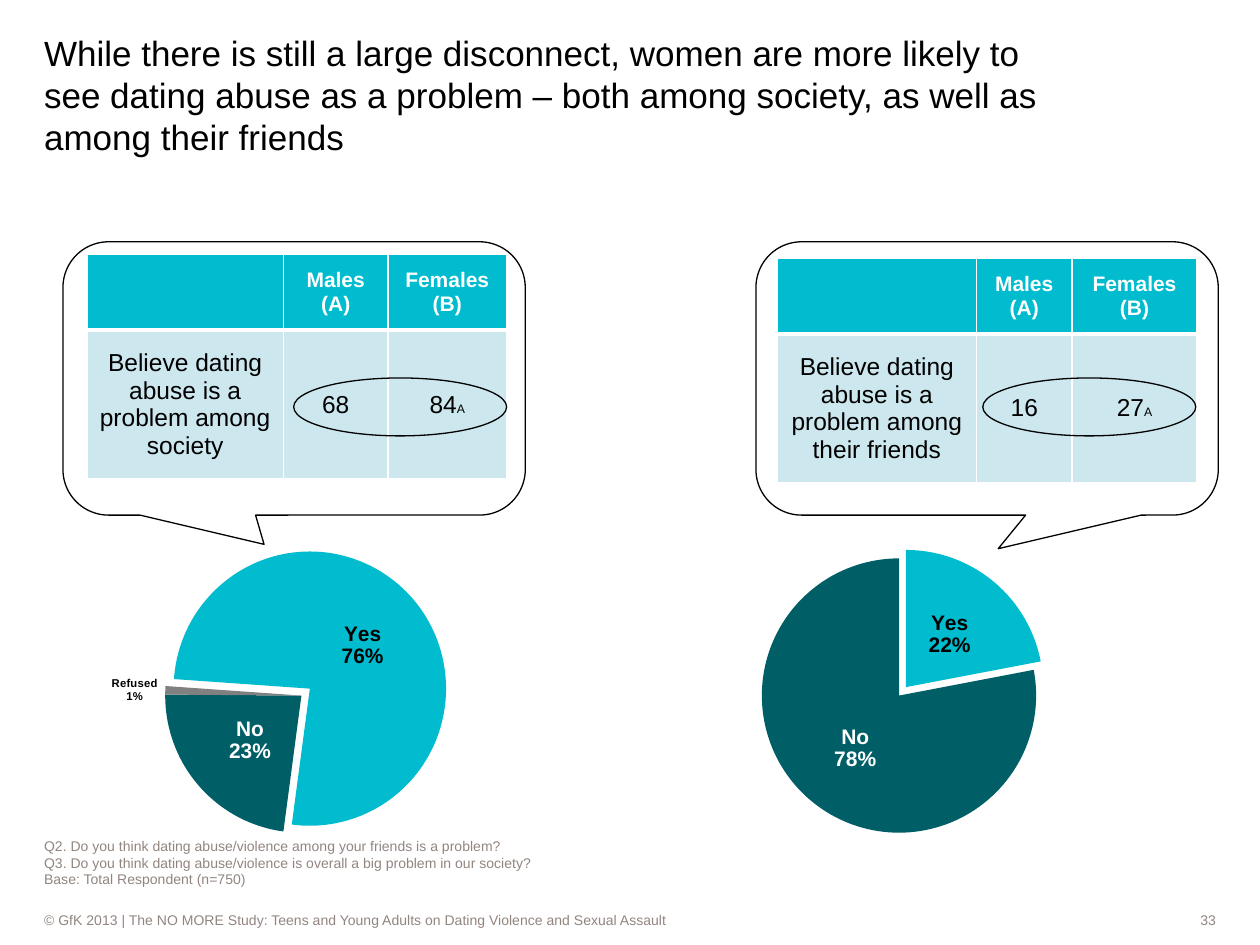
from dataclasses import dataclass

from lxml import etree
from pptx import Presentation
from pptx.chart.data import CategoryChartData
from pptx.dml.color import RGBColor
from pptx.enum.chart import XL_CHART_TYPE, XL_LABEL_POSITION
from pptx.enum.shapes import MSO_SHAPE
from pptx.enum.text import MSO_ANCHOR, PP_ALIGN
from pptx.oxml import parse_xml
from pptx.oxml.ns import nsdecls, qn
from pptx.util import Pt

PIE = XL_CHART_TYPE.PIE
LABEL_CENTER, LABEL_OUTSIDE = XL_LABEL_POSITION.CENTER, XL_LABEL_POSITION.OUTSIDE_END
CALLOUT, OVAL = MSO_SHAPE.ROUNDED_RECTANGULAR_CALLOUT, MSO_SHAPE.OVAL
TOP, MIDDLE, BOTTOM = MSO_ANCHOR.TOP, MSO_ANCHOR.MIDDLE, MSO_ANCHOR.BOTTOM
LEFT, CENTER, RIGHT = PP_ALIGN.LEFT, PP_ALIGN.CENTER, PP_ALIGN.RIGHT


@dataclass(frozen=True)
class Theme:
    font: str = "Arial"
    black: str = "000000"
    white: str = "FFFFFF"
    note: str = "928580"
    teal: str = "00BCCE"
    dark_teal: str = "005E67"
    gray: str = "808080"
    pale: str = "CCE7ED"
    title_size: float = 20
    body_size: float = 14
    label_size: float = 12
    note_size: float = 8
    mark_size: float = 7
    small_label_size: float = 6.5


THEME = Theme()


def points(*lengths):
    return [Pt(length) for length in lengths]


class SlideBuilder:
    def __init__(self, slide, theme):
        self.slide = slide
        self.theme = theme

    def style(self, font, size, color, bold=False):
        font.name, font.size, font.bold = self.theme.font, Pt(size), bold
        font.color.rgb = RGBColor.from_string(color)

    def text(self, box, lines, size, color, align=LEFT, anchor=MIDDLE, pitch=None):
        frame = self.slide.shapes.add_textbox(*points(*box)).text_frame
        frame.word_wrap = True
        frame.vertical_anchor = anchor
        frame.margin_left = frame.margin_right = frame.margin_top = frame.margin_bottom = 0
        frame.text = "\n".join(lines)
        for paragraph in frame.paragraphs:
            paragraph.alignment = align
            if pitch:
                paragraph.line_spacing = Pt(pitch)
            self.style(paragraph.font, size, color)

    def outline(self, kind, box, adjustments=()):
        shape = self.slide.shapes.add_shape(kind, *points(*box))
        shape.shadow.inherit = False
        shape.fill.background()
        shape.line.color.rgb = RGBColor.from_string(self.theme.black)
        shape.line.width = Pt(0.75)
        for index, value in enumerate(adjustments):
            shape.adjustments[index] = value

    def cell(self, cell, text, size, color, fill, bold=False, bottom=1, mark=""):
        cell.fill.solid()
        cell.fill.fore_color.rgb = RGBColor.from_string(fill)
        cell.vertical_anchor = MIDDLE
        cell.text = text
        for paragraph in cell.text_frame.paragraphs:
            paragraph.alignment = CENTER
            self.style(paragraph.font, size, color, bold)
        if mark:
            run = cell.text_frame.paragraphs[0].add_run()
            run.text = mark
            run.font.size = Pt(self.theme.mark_size)
        properties = cell._tc.get_or_add_tcPr()
        for index, (side, width) in enumerate(zip("LRTB", (1, 1, 1, bottom))):
            properties.insert(index, parse_xml(
                f'<a:ln{side} {nsdecls("a")} w="{Pt(width)}"><a:solidFill>'
                f'<a:srgbClr val="{self.theme.white}"/></a:solidFill></a:ln{side}>'))

    def table(self, left, top, widths, statement, males, females):
        theme = self.theme
        heights = (43.2, 85.2)
        table = self.slide.shapes.add_table(
            2, 3, *points(left, top, sum(widths), sum(heights))).table
        for column, width in zip(table.columns, widths):
            column.width = Pt(width)
        for row, height in zip(table.rows, heights):
            row.height = Pt(height)
        for index, text in enumerate(("", "Males\n(A)", "Females\n(B)")):
            self.cell(table.cell(0, index), text, theme.label_size, theme.white,
                      theme.teal, bold=True, bottom=3)
        for index, (text, mark) in enumerate(((statement, ""), (males, ""), (females, "A"))):
            self.cell(table.cell(1, index), text, theme.body_size, theme.black,
                      theme.pale, mark=mark)

    def pie(self, left, plot_left, slices, start=0):
        theme = self.theme
        data = CategoryChartData(number_format="0%")
        data.categories = [name for name, *_ in slices]
        data.add_series("Series 1", [value for _, value, *_ in slices])
        chart = self.slide.shapes.add_chart(
            PIE, *points(left, 243.4, 285.1, 321.1), data).chart
        chart.has_title = chart.has_legend = False
        self.style(chart.font, theme.label_size, theme.black, bold=True)
        plot = chart.plots[0]
        plot.vary_by_categories = True
        series = plot.series[0]

        # Slice colours and labels
        for index, (_, _, fill, color, size, position) in enumerate(slices):
            point = series.points[index]
            point.format.fill.solid()
            point.format.fill.fore_color.rgb = RGBColor.from_string(fill)
            point.format.line.fill.background()
            self.style(point.data_label.font, size, color, bold=True)
            point.data_label.position = position
        for label in series._element.iter(qn("c:dLbl")):
            label.find(qn("c:showCatName")).set("val", "1")
            etree.SubElement(label, qn("c:separator")).text = "\n"

        # The first slice stands out from the pie
        first = series._element.find(qn("c:dPt"))
        first.find(qn("c:spPr")).addprevious(
            parse_xml(f'<c:explosion {nsdecls("c")} val="8"/>'))
        pie = plot._element
        for angle in pie.findall(qn("c:firstSliceAng")):
            pie.remove(angle)
        etree.SubElement(pie, qn("c:firstSliceAng")).set("val", str(start))

        # Fixed plot area
        area = pie.getparent()
        for layout in area.findall(qn("c:layout")):
            area.remove(layout)
        places = (("x", plot_left), ("y", 0.2), ("w", 0.55), ("h", 0.56))
        modes = '<c:layoutTarget val="inner"/><c:xMode val="edge"/><c:yMode val="edge"/>'
        values = "".join(f'<c:{name} val="{value}"/>' for name, value in places)
        area.insert(0, parse_xml(f'<c:layout {nsdecls("c")}><c:manualLayout>{modes}{values}'
                                 '</c:manualLayout></c:layout>'))


def main():
    presentation = Presentation()
    presentation.slide_width, presentation.slide_height = points(720, 540)
    slide = presentation.slides.add_slide(presentation.slide_layouts[6])
    builder = SlideBuilder(slide, THEME)

    # Footer and title
    builder.text((25.2, 519.8, 555.8, 11.5),
                 ["© GfK 2013 | The NO MORE Study: Teens and Young Adults on Dating "
                  "Violence and Sexual Assault"], THEME.note_size, THEME.note)
    builder.text((592.6, 519.8, 102.2, 11.5), ["33"], THEME.note_size, THEME.note, RIGHT)
    builder.text((25.2, 18, 568.8, 72),
                 ["While there is still a large disconnect, women are more likely to see dating "
                  "abuse as a problem – both among society, as well as among their friends"],
                 THEME.title_size, THEME.black, anchor=BOTTOM, pitch=24)

    # Pies
    def yes_no(yes, no):
        return [("Yes", yes, THEME.teal, THEME.black, THEME.label_size, LABEL_CENTER),
                ("No", no, THEME.dark_teal, THEME.white, THEME.label_size, LABEL_CENTER)]

    refused = ("Refused", 0.01, THEME.gray, THEME.black, THEME.small_label_size, LABEL_OUTSIDE)
    builder.pie(409.7, 0.09, yes_no(0.22, 0.78))
    builder.pie(-30.2, 0.44, yes_no(0.76, 0.23) + [refused], start=274)

    # Tables in callouts, with the compared figures circled
    panels = (
        (36, (49.7, 145.4), (112.3, 59.8, 67.7), "society", "68", "84",
         (-0.065, 0.607, 0.167), 167.8),
        (432, (444.2, 147.6), (113.8, 54.7, 71.3), "their friends", "16", "27",
         (0.024, 0.623, 0.167), 561.6),
    )
    for left, corner, widths, group, males, females, tail, oval_left in panels:
        builder.table(*corner, widths, f"Believe dating abuse is a problem among {group}",
                      males, females)
        builder.outline(CALLOUT, (left, 138.2, 264.2, 156.2), tail)
        builder.outline(OVAL, (oval_left, 216, 121.7, 33.1))

    # Question wording
    builder.text((25.2, 478.8, 668.9, 28.8),
                 ["Q2. Do you think dating abuse/violence among your friends is a problem?",
                  "Q3. Do you think dating abuse/violence is overall a big problem in our society?",
                  "Base: Total Respondent (n=750)"],
                 THEME.note_size, THEME.note, anchor=TOP, pitch=9.5)

    presentation.save("out.pptx")


if __name__ == "__main__":
    main()
